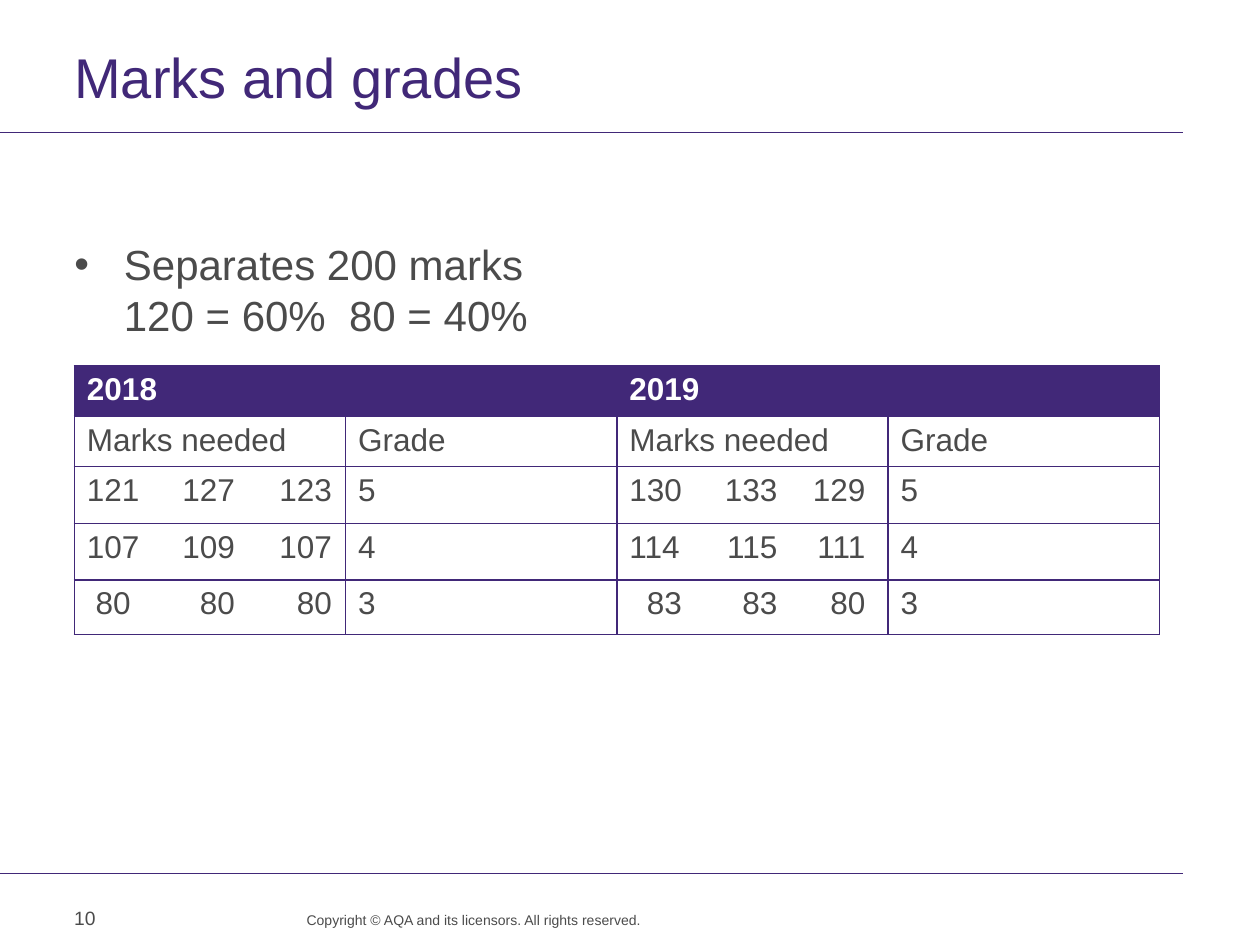
import pptx
import pptx.util
import pptx.dml.color
import pptx.enum.shapes
import pptx.enum.text
import pptx.oxml.ns
import lxml.etree

Pt = pptx.util.Pt
Mid = pptx.enum.text.MSO_ANCHOR.MIDDLE
Right = pptx.enum.text.PP_ALIGN.RIGHT

HUES = {"plum": "412878", "grey": "4B4B4B", "white": "FFFFFF"}

TEXTS = [
    {"text": "Marks and grades", "at": (42.5, 34.5, 633.5, 34), "pad": (0, 0, 7.2, 0),
     "font": {"size": Pt(32)}, "hue": "plum", "para": {"line_spacing": Pt(28)}},
    {"text": "Separates 200 marks\v120 = 60%  80 = 40%", "at": (42.5, 136, 633.5, 347),
     "pad": (0, 0, 7.2, 0), "font": {"size": Pt(24)}, "hue": "grey",
     "para": {"line_spacing": Pt(29)}, "bullet": 28.35},
    {"text": "10", "at": (35.3, 510, 54.7, 29), "pad": (7.2, 3.6, 7.2, 3.6),
     "font": {"size": Pt(11)}, "hue": "grey", "frame": {"vertical_anchor": Mid}},
    {"text": "Copyright © AQA and its licensors. All rights reserved.",
     "at": (155.5, 520.5, 211, 18.7), "pad": (0, 0, 0, 0), "font": {"size": Pt(8)},
     "hue": "grey", "para": {"line_spacing": Pt(10), "alignment": Right}},
]
RULES = [75.6, 499]
RULE_END = 676

GRID = {"left": 42.5, "top": 209, "col": 155, "rows": [27.6, 27.6, 32.4, 32.4, 31]}
CELLS = [
    ["2018", "", "2019", ""],
    ["Marks needed", "Grade", "Marks needed", "Grade"],
    ["121\t127\t123", "5", "130\t133\t129", "5"],
    ["107\t109\t107", "4", "114\t115\t111", "4"],
    ["80\t80\t80", "3", "83\t83\t80", "3"],
]
STOPS = {0: (84.5, 140), 2: (84.5, 134.8)}
SHIFT = {(4, 0): 5, (4, 2): 10}


def tint(hue):
    return pptx.dml.color.RGBColor.from_string(HUES[hue])


def put(thing, vals):
    for key, val in vals.items():
        setattr(thing, key, val)


def add(node, tag, **vals):
    return lxml.etree.SubElement(node, pptx.oxml.ns.qn(tag), vals)


def style(para, hue, font):
    put(para.font, {"name": "Arial", **font})
    para.font.color.rgb = tint(hue)


def dot(para, hang):
    props = para._p.get_or_add_pPr()
    props.set("marL", str(Pt(hang)))
    props.set("indent", str(-Pt(hang)))
    add(props, "a:buFont", typeface="Arial")
    add(props, "a:buChar", char="•")


def tabs(para, stops):
    row = add(para._p.get_or_add_pPr(), "a:tabLst")
    for stop in stops:
        add(row, "a:tab", pos=str(Pt(stop)), algn="r")


def edge(cell):
    props = cell._tc.get_or_add_tcPr()
    for spot, side in enumerate("LRTB"):
        line = lxml.etree.Element(pptx.oxml.ns.qn("a:ln" + side), {"w": str(Pt(1))})
        add(add(line, "a:solidFill"), "a:srgbClr", val=HUES["plum"])
        props.insert(spot, line)


def write(slide, item):
    box = slide.shapes.add_textbox(*map(Pt, item["at"]))
    frame = box.text_frame
    sides = ("margin_left", "margin_top", "margin_right", "margin_bottom")
    put(frame, {"word_wrap": True, **dict(zip(sides, map(Pt, item["pad"]))),
                **item.get("frame", {})})
    para = frame.paragraphs[0]
    para.text = item["text"]
    put(para, item.get("para", {}))
    if "bullet" in item:
        dot(para, item["bullet"])
    style(para, item["hue"], item["font"])


def rule(slide, high):
    line = slide.shapes.add_connector(
        pptx.enum.shapes.MSO_CONNECTOR.STRAIGHT, 0, Pt(high), Pt(RULE_END), Pt(high))
    line.line.width = Pt(0.6)
    line.line.color.rgb = tint("plum")
    add(line._element.spPr, "a:effectLst")


def chart(slide):
    rows, cols = len(CELLS), len(CELLS[0])
    table = slide.shapes.add_table(
        rows, cols, Pt(GRID["left"]), Pt(GRID["top"]),
        Pt(GRID["col"] * cols), Pt(sum(GRID["rows"]))).table
    for col in table.columns:
        col.width = Pt(GRID["col"])
    for r, line in enumerate(CELLS):
        table.rows[r].height = Pt(GRID["rows"][r])
        for c, text in enumerate(line):
            cell = table.cell(r, c)
            head = r == 0
            cell.fill.solid()
            cell.fill.fore_color.rgb = tint("plum" if head else "white")
            edge(cell)
            shift = SHIFT.get((r, c), 0)
            cell.margin_left = Pt(7.2 + shift)
            para = cell.text_frame.paragraphs[0]
            para.text = text
            if "\t" in text:
                tabs(para, [stop - shift for stop in STOPS[c]])
            style(para, "white" if head else "grey", {"size": Pt(18), "bold": head})


def main():
    deck = pptx.Presentation()
    put(deck, {"slide_width": Pt(720), "slide_height": Pt(540)})
    slide = deck.slides.add_slide(deck.slide_layouts[6])
    for high in RULES:
        rule(slide, high)
    for item in TEXTS:
        write(slide, item)
    chart(slide)
    deck.save("out.pptx")


if __name__ == "__main__":
    main()
